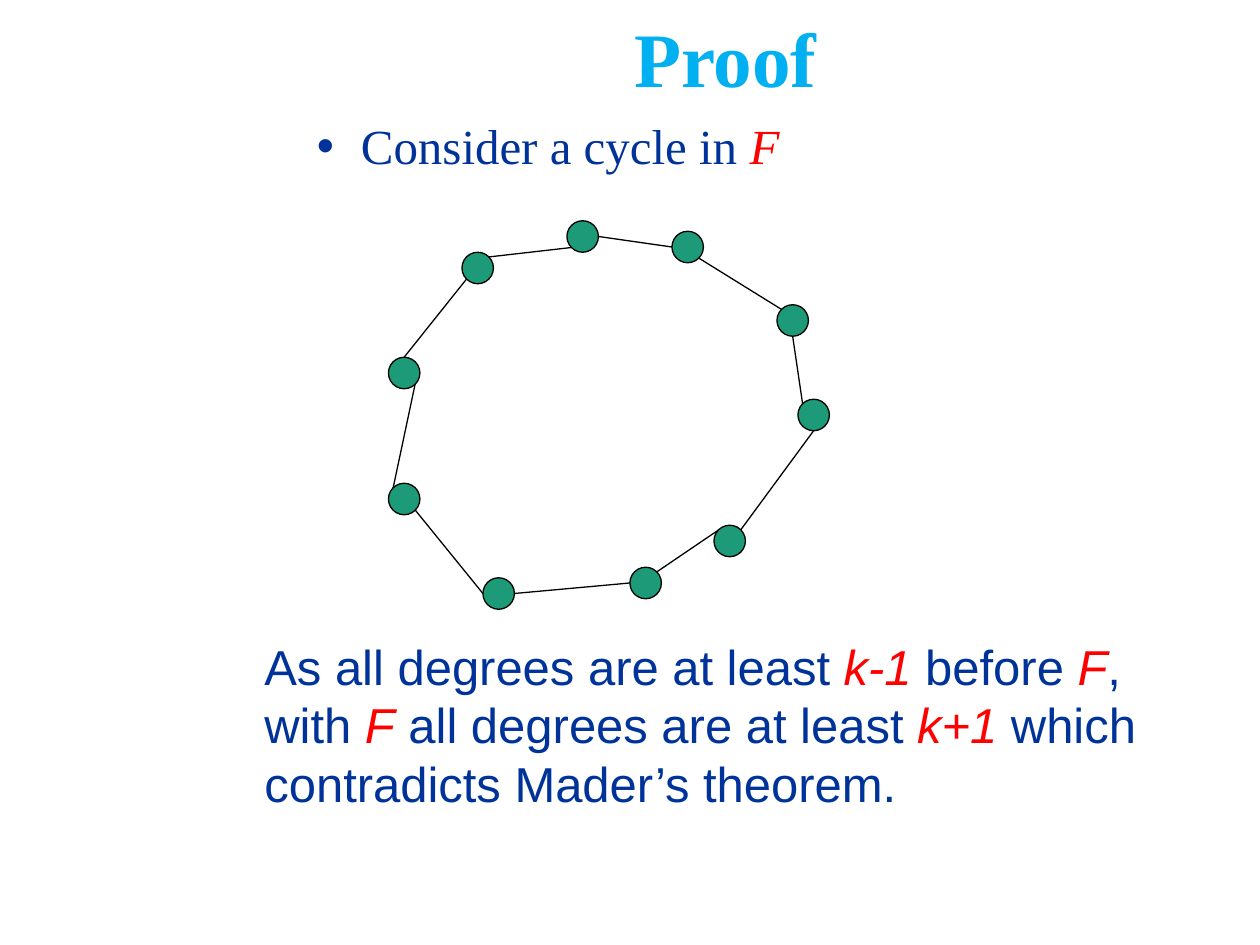
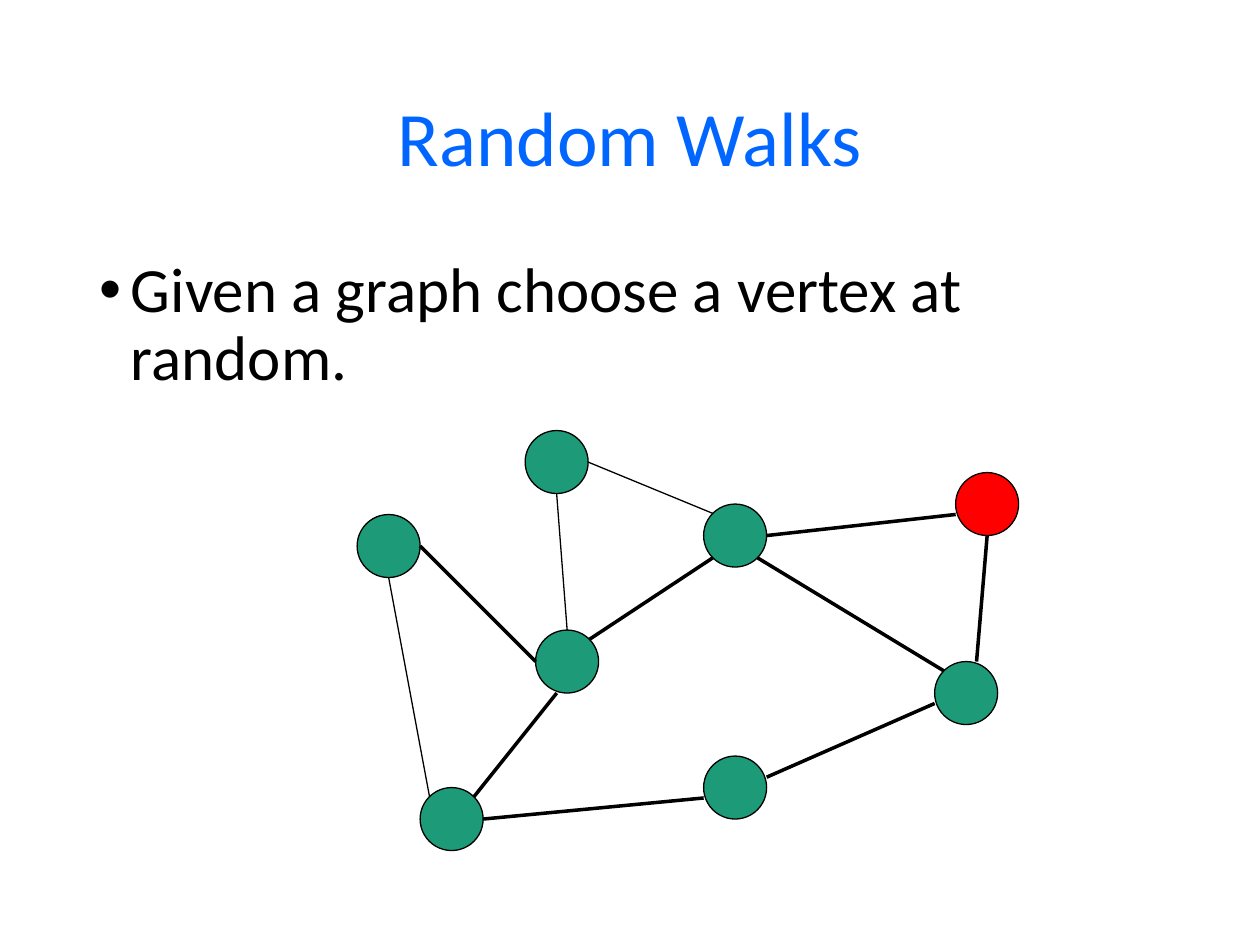
from lxml import etree
from pptx import Presentation
from pptx.dml.color import RGBColor
from pptx.enum.shapes import MSO_CONNECTOR, MSO_SHAPE
from pptx.enum.text import MSO_ANCHOR, PP_ALIGN
from pptx.oxml.ns import qn
from pptx.util import Cm, Pt

ELLIPSE = MSO_SHAPE.OVAL
STRAIGHT = MSO_CONNECTOR.STRAIGHT
TOP, MIDDLE = MSO_ANCHOR.TOP, MSO_ANCHOR.MIDDLE
LEFT, CENTER = PP_ALIGN.LEFT, PP_ALIGN.CENTER

BLACK, NAVY, RED, GREEN = "000000", "003399", "FF0000", "1D9A78"
SKY, BLUE = "00B0F0", "0066FF"
SERIF, SANS, BODY = "Times New Roman", "Arial", "Calibri"
GRID = Cm(2.54) / 12
INDENT = Cm(0.64)
THIN, THICK = 0.75, 2

SITES = {
    "n": (0, -1), "s": (0, 1), "w": (-1, 0), "e": (1, 0),
    "nw": (-0.7, -0.7), "ne": (0.7, -0.7), "sw": (-0.7, 0.7), "se": (0.7, 0.7),
    "nne": (0.33, -1), "ssw": (-0.33, 1), "ene": (1, -0.33), "wsw": (-1, 0.33),
}

CYCLE_VERTICES = [(0, 13), (7, 3), (17, 0), (27, 1), (37, 8),
                  (39, 17), (31, 29), (23, 33), (9, 34), (0, 25)]
CYCLE_SITES = ["n sw", "ne sw", "e w", "se nw", "s nw",
               "s ne", "nw ne", "w e", "w se", "nw se"]

WALK_VERTICES = {"peak": (16, 0), "west": (0, 8), "middle": (17, 19), "corner": (6, 34),
                 "south": (33, 31), "hub": (33, 7), "start": (57, 4), "east": (55, 22)}
WALK_EDGES = [
    ("west", "middle", "e w", THICK),
    ("corner", "south", "e wsw", THICK),
    ("corner", "middle", "ne ssw", THICK),
    ("east", "start", "nne s", THICK),
    ("south", "east", "ene wsw", THICK),
    ("hub", "start", "e wsw", THICK),
    ("middle", "hub", "ne sw", THICK),
    ("hub", "east", "se nw", THICK),
    ("middle", "peak", "n s", THIN),
    ("peak", "hub", "e nw", THIN),
    ("west", "corner", "s nw", THIN),
]


def rgb(value):
    """Turn a hex string into a colour."""
    return RGBColor.from_string(value)


def add_text(slide, box, text, *, font, size, color, accent=RED, bold=False,
             align=LEFT, anchor=TOP, spacing=1.0, bullet=False):
    """Write one paragraph, setting the parts between asterisks in accented italics."""
    frame = slide.shapes.add_textbox(*(Cm(length) for length in box)).text_frame
    frame.word_wrap = True
    frame.vertical_anchor = anchor
    paragraph = frame.paragraphs[0]
    paragraph.alignment = align
    paragraph.line_spacing = spacing
    for index, part in enumerate(text.split("*")):
        if not part:
            continue
        emphasised = index % 2 == 1
        run = paragraph.add_run()
        run.text = part
        run.font.name = font
        run.font.size = Pt(size)
        run.font.bold = bold
        run.font.italic = emphasised
        run.font.color.rgb = rgb(accent if emphasised else color)
    if bullet:
        paragraph.space_before = Pt(10)
        properties = paragraph._p.get_or_add_pPr()
        properties.set("marL", str(INDENT))
        properties.set("indent", str(-INDENT))
        etree.SubElement(properties, qn("a:buFont")).set("typeface", "Arial")
        etree.SubElement(properties, qn("a:buChar")).set("char", "•")


def add_title(slide, box, text, **style):
    """Write a centred slide title."""
    add_text(slide, box, text, size=44, align=CENTER, anchor=MIDDLE, spacing=0.9, **style)


def add_bullet(slide, box, text, **style):
    """Write a bulleted statement."""
    add_text(slide, box, text, spacing=0.9, bullet=True, **style)


def add_vertex(slide, center, radius, color):
    """Draw one round vertex about its centre."""
    x, y = center
    vertex = slide.shapes.add_shape(ELLIPSE, round(x - radius), round(y - radius),
                                    round(2 * radius), round(2 * radius))
    vertex.shadow.inherit = False
    vertex.fill.solid()
    vertex.fill.fore_color.rgb = rgb(color)
    vertex.line.color.rgb = rgb(BLACK)
    vertex.line.width = Pt(THIN)


def add_edge(slide, start, end, width):
    """Draw one straight edge between two points."""
    edge = slide.shapes.add_connector(STRAIGHT, *map(round, start + end))
    edge.line.color.rgb = rgb(BLACK)
    edge.line.width = Pt(width)
    etree.SubElement(edge._element.spPr, qn("a:effectLst"))


def add_graph(slide, origin, diameter, vertices, edges, marked=None):
    """Draw vertices on a grid from the origin, then edges between their rim sites."""
    radius = diameter * GRID / 2
    left, top = (Cm(length) for length in origin)
    centers = {key: (left + column * GRID + radius, top + row * GRID + radius)
               for key, (column, row) in vertices.items()}

    def rim(key, site):
        """Locate a named site on the rim of a vertex."""
        return tuple(middle + radius * offset
                     for middle, offset in zip(centers[key], SITES[site]))

    for key, center in centers.items():
        add_vertex(slide, center, radius, RED if key == marked else GREEN)
    for first, second, sites, width in edges:
        first_site, second_site = sites.split()
        add_edge(slide, rim(first, first_site), rim(second, second_site), width)


def build_proof(slide):
    """Build the slide with the cycle argument."""
    add_title(slide, (5.93, 0, 17.78, 2.54), "Proof ", font=SERIF, color=SKY, bold=True)
    add_bullet(slide, (6.14, 2.33, 17.78, 11.22), " Consider a cycle in *F*",
               font=SERIF, size=28, color=NAVY)
    count = len(CYCLE_VERTICES)
    edges = [(index, (index + 1) % count, sites, THIN)
             for index, sites in enumerate(CYCLE_SITES)]
    add_graph(slide, (7.83, 4.45), 3, dict(enumerate(CYCLE_VERTICES)), edges)
    add_text(slide, (5.08, 12.7, 19.48, 5.59),
             "As all degrees are at least *k-1 *before *F*, with *F* all degrees "
             "are at least *k+1 *which contradicts Mader’s theorem.",
             font=SANS, size=28, color=NAVY)


def build_random_walks(slide):
    """Build the slide with the random walk graph."""
    add_title(slide, (1.75, 1.02, 21.9, 3.68), "Random Walks", font=BODY, color=BLUE)
    add_bullet(slide, (1.75, 5.08, 21.9, 12.09), "Given a graph choose a vertex at random.",
               font=BODY, size=36, color=BLACK)
    add_graph(slide, (7.2, 8.68), 6, WALK_VERTICES, WALK_EDGES, marked="start")


def main():
    """Build and save the presentation."""
    deck = Presentation()
    deck.slide_width, deck.slide_height = Cm(25.4), Cm(19.05)
    for build in (build_proof, build_random_walks):
        build(deck.slides.add_slide(deck.slide_layouts[6]))
    deck.save("out.pptx")


if __name__ == "__main__":
    main()
